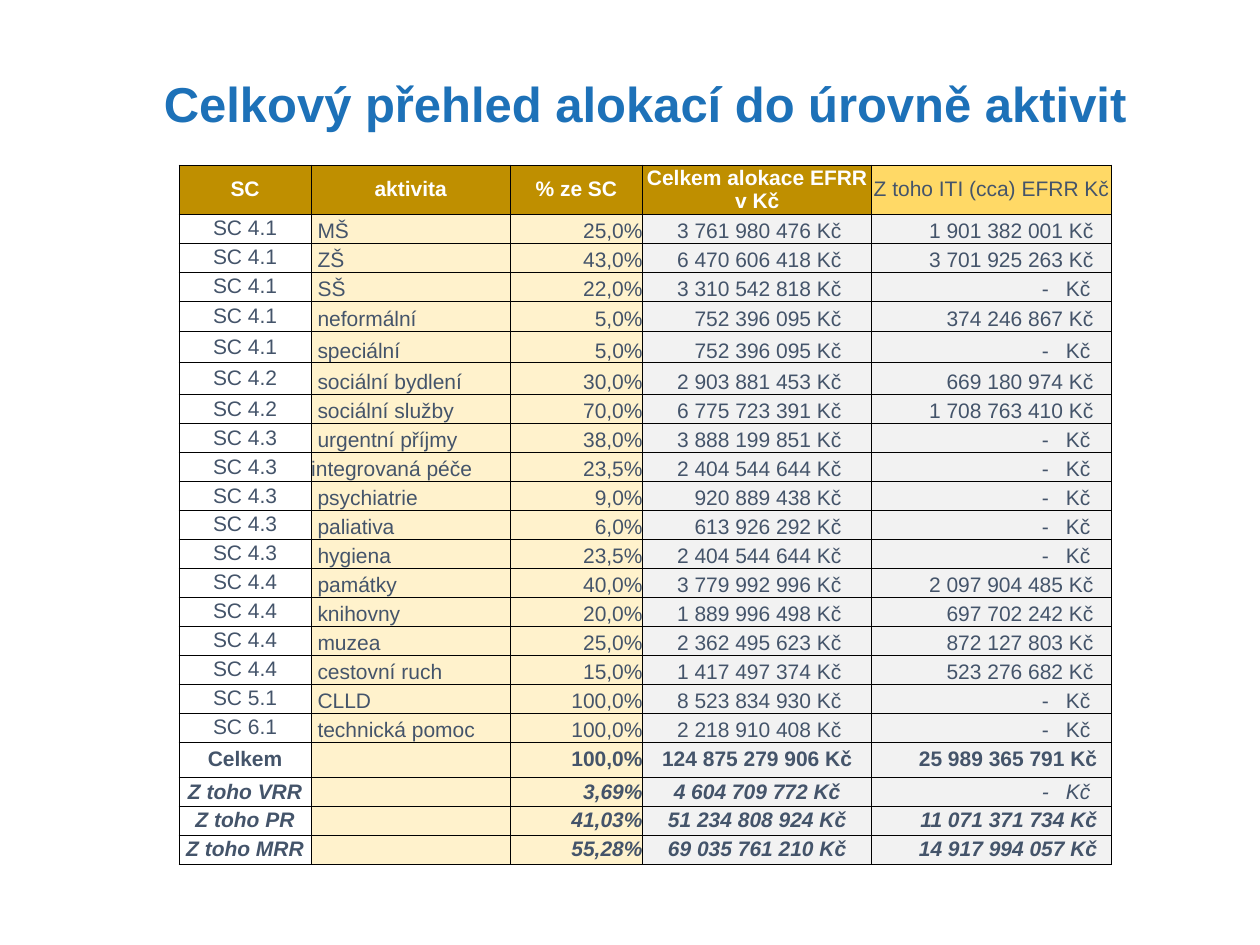
from dataclasses import dataclass

from lxml.etree import SubElement
from pptx import Presentation
from pptx.dml.color import RGBColor
from pptx.enum.text import MSO_ANCHOR as Anchor, PP_ALIGN as Align
from pptx.oxml.ns import qn
from pptx.util import Inches, Length, Pt

FONT = "Arial"
WHITE, SLATE, BLUE, BLACK = "FFFFFF", "44546A", "1D71B8", "000000"
GOLD, YELLOW, CREAM, GREY = "BF8F00", "FFD966", "FFF2CC", "F2F2F2"
COLUMN_FILLS = [WHITE, CREAM, CREAM, GREY, GREY]
COLUMN_UNITS = [105, 158, 105, 182, 190]
HEADER_UNITS, ROW_UNITS = 39, 23
TALLER_ROWS = {4: 24, 5: 25, 6: 25, 19: 28}
HEADERS = ["SC", "aktivita", "% ze SC", "Celkem alokace EFRR v Kč", "Z toho ITI (cca) EFRR Kč"]


@dataclass
class Allocation:
    goal: str
    activity: str
    share: str
    total: str
    iti: str = ""
    bold: bool = False
    italic: bool = False


ALLOCATIONS = [
    Allocation("SC 4.1", "MŠ", "25,0%", "3 761 980 476", "1 901 382 001"),
    Allocation("SC 4.1", "ZŠ", "43,0%", "6 470 606 418", "3 701 925 263"),
    Allocation("SC 4.1", "SŠ", "22,0%", "3 310 542 818"),
    Allocation("SC 4.1", "neformální", "5,0%", "752 396 095", "374 246 867"),
    Allocation("SC 4.1", "speciální", "5,0%", "752 396 095"),
    Allocation("SC 4.2", "sociální bydlení", "30,0%", "2 903 881 453", "669 180 974"),
    Allocation("SC 4.2", "sociální služby", "70,0%", "6 775 723 391", "1 708 763 410"),
    Allocation("SC 4.3", "urgentní příjmy", "38,0%", "3 888 199 851"),
    Allocation("SC 4.3", "integrovaná péče", "23,5%", "2 404 544 644"),
    Allocation("SC 4.3", "psychiatrie", "9,0%", "920 889 438"),
    Allocation("SC 4.3", "paliativa", "6,0%", "613 926 292"),
    Allocation("SC 4.3", "hygiena", "23,5%", "2 404 544 644"),
    Allocation("SC 4.4", "památky", "40,0%", "3 779 992 996", "2 097 904 485"),
    Allocation("SC 4.4", "knihovny", "20,0%", "1 889 996 498", "697 702 242"),
    Allocation("SC 4.4", "muzea", "25,0%", "2 362 495 623", "872 127 803"),
    Allocation("SC 4.4", "cestovní ruch", "15,0%", "1 417 497 374", "523 276 682"),
    Allocation("SC 5.1", "CLLD", "100,0%", "8 523 834 930"),
    Allocation("SC 6.1", "technická pomoc", "100,0%", "2 218 910 408"),
    Allocation("Celkem", "", "100,0%", "124 875 279 906", "25 989 365 791", True),
    Allocation("Z toho VRR", "", "3,69%", "4 604 709 772", "", True, True),
    Allocation("Z toho PR", "", "41,03%", "51 234 808 924", "11 071 371 734", True, True),
    Allocation("Z toho MRR", "", "55,28%", "69 035 761 210", "14 917 994 057", True, True),
]


def units(count: float) -> Length:
    return Inches(count / 100)


def color(value: str) -> RGBColor:
    return RGBColor.from_string(value)


def write(paragraph, text: str, *, size=12, ink=SLATE, bold=False, italic=False,
          align=Align.CENTER, tab=0) -> None:
    paragraph.alignment = align
    if tab:
        tabs = SubElement(paragraph._p.get_or_add_pPr(), qn("a:tabLst"))
        SubElement(tabs, qn("a:tab"), pos=str(units(tab)), algn="l")
    if not text:
        SubElement(paragraph._p, qn("a:endParaRPr"), sz=str(size * 100))
        return
    run = paragraph.add_run()
    run.text = text
    font = run.font
    font.name, font.size, font.bold, font.italic = FONT, Pt(size), bold, italic
    font.color.rgb = color(ink)


def draw_borders(cell) -> None:
    properties = cell._tc.get_or_add_tcPr()
    for position, side in enumerate(("a:lnL", "a:lnR", "a:lnT", "a:lnB")):
        line = SubElement(properties, qn(side), w=str(Pt(0.5)))
        fill = SubElement(line, qn("a:solidFill"))
        SubElement(fill, qn("a:srgbClr"), val=BLACK)
        properties.insert(position, line)


def draw_cell(cell, text: str, fill: str, *, anchor=Anchor.MIDDLE, left=0, right=0,
              **text_format) -> None:
    cell.margin_left, cell.margin_right = units(left), units(right)
    cell.margin_top = cell.margin_bottom = 0
    cell.vertical_anchor = anchor
    cell.fill.solid()
    cell.fill.fore_color.rgb = color(fill)
    draw_borders(cell)
    write(cell.text_frame.paragraphs[0], text, **text_format)


def draw_allocation(table, row: int, item: Allocation) -> None:
    goal, activity, share, total, iti = (
        dict(cell=table.cell(row, column), fill=fill, bold=item.bold, italic=item.italic)
        for column, fill in enumerate(COLUMN_FILLS))
    anchor = Anchor.MIDDLE if item.bold else Anchor.BOTTOM
    indent = 0 if item.activity == "integrovaná péče" else 5
    draw_cell(text=item.goal, **goal)
    draw_cell(text=item.activity, anchor=anchor, left=indent, align=Align.LEFT, **activity)
    draw_cell(text=item.share, anchor=anchor, align=Align.RIGHT, **share)
    total_format = {} if item.bold else dict(align=Align.RIGHT, right=24)
    draw_cell(text=f"{item.total} Kč", anchor=anchor, **total_format, **total)
    if item.iti:
        draw_cell(text=f"{item.iti} Kč", anchor=anchor, align=Align.RIGHT,
                  right=11 if item.bold else 14, **iti)
    else:
        iti["bold"] = False
        draw_cell(text="-\tKč", anchor=anchor, align=Align.LEFT, left=135, tab=19, **iti)


def draw_table(slide) -> None:
    heights = [HEADER_UNITS] + [TALLER_ROWS.get(row, ROW_UNITS)
                                for row in range(1, len(ALLOCATIONS) + 1)]
    frame = slide.shapes.add_table(len(heights), len(COLUMN_UNITS), units(142), units(131),
                                   units(sum(COLUMN_UNITS)), units(sum(heights)))
    table = frame.table
    table.first_row = table.horz_banding = False
    for column, width in zip(table.columns, COLUMN_UNITS):
        column.width = units(width)
    for row, height in zip(table.rows, heights):
        row.height = units(height)
    for column, text in enumerate(HEADERS):
        last = column == len(HEADERS) - 1
        draw_cell(table.cell(0, column), text, YELLOW if last else GOLD,
                  ink=SLATE if last else WHITE, bold=not last)
    for row, item in enumerate(ALLOCATIONS, 1):
        draw_allocation(table, row, item)


def draw_title(slide, text: str) -> None:
    title = slide.shapes.title
    title.left, title.top, title.width, title.height = map(units, (82, 5, 860, 160))
    title.text_frame.vertical_anchor = Anchor.MIDDLE
    paragraph = title.text_frame.paragraphs[0]
    paragraph.line_spacing = 0.9
    write(paragraph, text, size=28, ink=BLUE, bold=True)


def main() -> None:
    presentation = Presentation()
    presentation.slide_width, presentation.slide_height = units(1000), units(750)
    slide = presentation.slides.add_slide(presentation.slide_layouts[5])
    draw_title(slide, "Celkový přehled alokací do úrovně aktivit")
    draw_table(slide)
    presentation.save("out.pptx")


if __name__ == "__main__":
    main()
